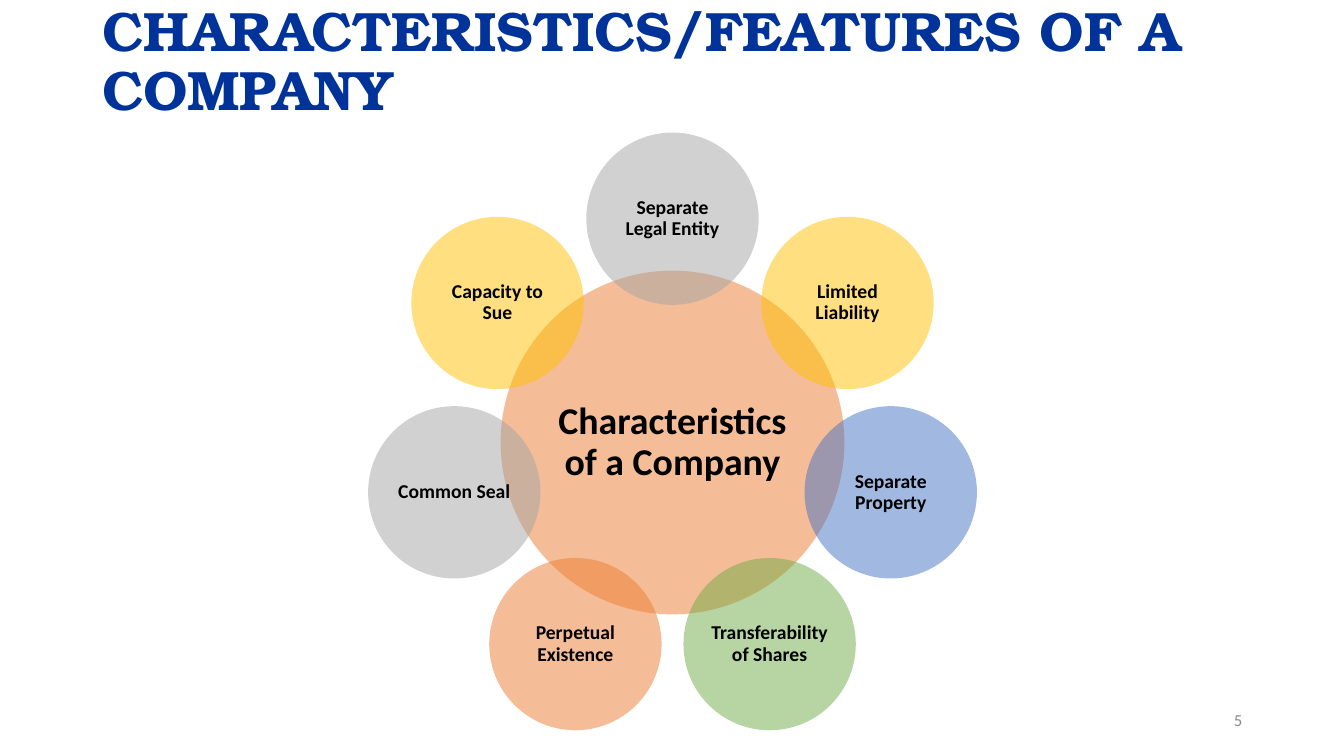
"""Build a slide with a ring of company features around a central circle."""
from math import cos, pi, sin

from lxml.etree import SubElement
from pptx import Presentation
from pptx.dml.color import RGBColor
from pptx.enum.shapes import MSO_SHAPE
from pptx.enum.text import MSO_ANCHOR, PP_ALIGN
from pptx.oxml.ns import qn
from pptx.util import Pt

TITLE = "CHARACTERISTICS/FEATURES OF A COMPANY"
HUB = ("Characteristics of a Company", "ED7D31")
RING = [
    ("Separate Legal Entity", "A5A5A5"),
    ("Limited Liability", "FFC000"),
    ("Separate Property", "4472C4"),
    ("Transferability of Shares", "70AD47"),
    ("Perpetual Existence", "ED7D31"),
    ("Common Seal", "A5A5A5"),
    ("Capacity to Sue", "FFC000"),
]
PAGE = "5"

PX = 9144
WIDE, HIGH = 1333, 750
MID_X, MID_Y = 667, 439
HUB_SIZE, DOT_SIZE, REACH = 341, 171, 222


def px(num):
    return round(num * PX)


def color(code):
    return RGBColor.from_string(code)


def write(shape, text, size, code, align, font="Calibri", bold=True, pad=None):
    frame = shape.text_frame
    frame.word_wrap = True
    frame.vertical_anchor = MSO_ANCHOR.MIDDLE
    if pad is not None:
        frame.margin_left = frame.margin_right = px(pad)
        frame.margin_top = frame.margin_bottom = px(pad)
    frame.text = text
    para = frame.paragraphs[0]
    para.alignment = align
    para.line_spacing = 0.9
    face = para.runs[0].font
    face.name, face.size, face.bold = font, Pt(size), bold
    face.color.rgb = color(code)


def label(slide, box, *args, **style):
    shape = slide.shapes.add_textbox(*map(px, box))
    write(shape, *args, **style)


def circle(slide, x, y, size, item, points, pad):
    text, code = item
    shape = slide.shapes.add_shape(
        MSO_SHAPE.OVAL, px(x - size / 2), px(y - size / 2), px(size), px(size))
    shape.shadow.inherit = False
    shape.line.fill.background()
    shape.fill.solid()
    shape.fill.fore_color.rgb = color(code)
    tint = shape.fill._xPr.find(qn("a:solidFill"))[0]
    SubElement(tint, qn("a:alpha")).set("val", "50000")
    write(shape, text, points, "000000", PP_ALIGN.CENTER, pad=pad)


def main():
    deck = Presentation()
    deck.slide_width, deck.slide_height = px(WIDE), px(HIGH)
    slide = deck.slides.add_slide(deck.slide_layouts[6])
    label(slide, (92, 12, 1150, 101), TITLE, 39.6, "003399",
          PP_ALIGN.LEFT, font="TeX Gyre Bonum")
    circle(slide, MID_X, MID_Y, HUB_SIZE, HUB, 27, 4)
    for i, item in enumerate(RING):
        turn = 2 * pi * i / len(RING)
        x, y = MID_X + REACH * sin(turn), MID_Y - REACH * cos(turn)
        circle(slide, x, y, DOT_SIZE, item, 14, 2)
    label(slide, (942, 695, 300, 40), PAGE, 12, "8C8C8C",
          PP_ALIGN.RIGHT, bold=False)
    deck.save("out.pptx")


if __name__ == "__main__":
    main()
